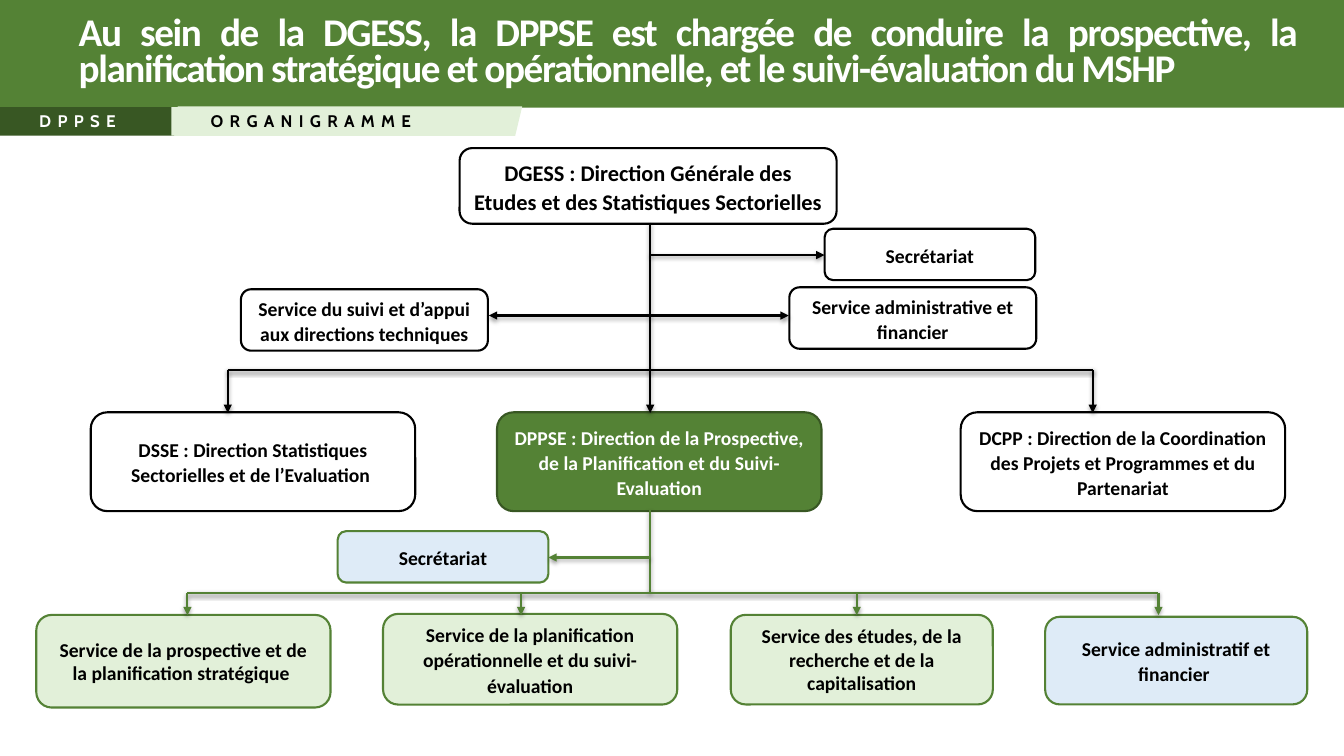
"""Builds the DPPSE organisation chart slide."""
from dataclasses import dataclass

from lxml import etree
from pptx import Presentation
from pptx.dml.color import RGBColor
from pptx.enum.shapes import MSO_CONNECTOR, MSO_SHAPE
from pptx.enum.text import MSO_ANCHOR, MSO_AUTO_SIZE, PP_ALIGN
from pptx.oxml.ns import qn
from pptx.util import Pt

RECTANGLE, ROUNDED = MSO_SHAPE.RECTANGLE, MSO_SHAPE.ROUNDED_RECTANGLE
STRAIGHT = MSO_CONNECTOR.STRAIGHT
MIDDLE, TOP = MSO_ANCHOR.MIDDLE, MSO_ANCHOR.TOP
CENTER, JUSTIFY, LEFT = PP_ALIGN.CENTER, PP_ALIGN.JUSTIFY, PP_ALIGN.LEFT
NO_FIT, FIT_SHAPE = MSO_AUTO_SIZE.NONE, MSO_AUTO_SIZE.SHAPE_TO_FIT_TEXT


@dataclass(frozen=True)
class Theme:
    white: str = "FFFFFF"
    black: str = "000000"
    green: str = "548235"
    dark_green: str = "385723"
    pale_green: str = "E2F0D9"
    pale_blue: str = "DEEBF7"
    body_font: str = "Calibri"
    tab_font: str = "Cabin"
    title_size: float = 28
    head_size: float = 16
    box_size: float = 14
    tab_size: float = 12
    line_width: float = 1.5


THEME = Theme()


@dataclass(frozen=True)
class Box:
    text: str
    left: float
    top: float
    width: float
    height: float
    fill: str = THEME.white
    outline: str = THEME.black
    color: str = THEME.black
    size: float = THEME.box_size
    line_spacing: float = 1.07
    space_after: float = 8


@dataclass(frozen=True)
class Link:
    start: tuple[float, float]
    end: tuple[float, float]
    color: str = THEME.black
    head: bool = False
    tail: bool = False


@dataclass(frozen=True)
class Tab:
    text: str
    left: float
    width: float
    fill: str
    color: str


TITLE = ("Au sein de la DGESS, la DPPSE est chargée de conduire la prospective, la planification "
         "stratégique et opérationnelle, et le suivi-évaluation du MSHP")
BAND_HEIGHT = 77
TAB_TOP, TAB_HEIGHT = 76.5, 20.4
TABS = (Tab("DPPSE", 0, 124.5, THEME.dark_green, THEME.white),
        Tab("ORGANIGRAMME", 122.5, 207.5, THEME.pale_green, THEME.black))
TAB_SLANT = ((372.8, TAB_TOP), (368.5, TAB_TOP + TAB_HEIGHT),
             (122.5, TAB_TOP + TAB_HEIGHT), (126.8, TAB_TOP))

DIRECTION = (231.8, 70.6)
SECRETARIAT = (150.5, 36.7)
SUPPORT = (176.4, 43.9)
BOXES = (
    Box("DGESS : Direction Générale des Etudes et des Statistiques Sectorielles",
        328.3, 105.8, 269.3, 54, size=THEME.head_size),
    Box("Secrétariat", 589, 163.4, *SECRETARIAT),
    Box("Service du suivi et d’appui aux directions techniques", 172.1, 206.6, *SUPPORT),
    Box("Service administrative et financier", 563.8, 205.2, *SUPPORT),
    Box("DSSE : Direction Statistiques Sectorielles et de l’Evaluation ", 64.8, 294.5, *DIRECTION),
    Box("DPPSE : Direction de la Prospective, de la Planification et du Suivi-Evaluation",
        355, 294.5, *DIRECTION, THEME.green, THEME.dark_green, THEME.white),
    Box("DCPP : Direction de la Coordination des Projets et Programmes et du Partenariat",
        686.2, 294.5, *DIRECTION),
    Box("Secrétariat", 241.2, 379.4, *SECRETARIAT, THEME.pale_blue, THEME.green),
    Box("Service de la prospective et de la planification stratégique ",
        25.9, 439.2, 210.2, 66.2, THEME.pale_green, THEME.green, line_spacing=1, space_after=0),
    Box("Service de la planification opérationnelle et du suivi-évaluation",
        273.6, 438.5, 210.2, 64.8, THEME.pale_green, THEME.green),
    Box("Service des études, de la recherche et de la capitalisation",
        522, 439.2, 187.2, 64, THEME.pale_green, THEME.green, line_spacing=1, space_after=0),
    Box("Service administratif et financier ",
        746.6, 440.6, 187.2, 62.6, THEME.pale_blue, THEME.green),
)

TRUNK = 464.4
UPPER_BUS, LOWER_BUS = 264.2, 423.5
UPPER_DROPS = (162.7, TRUNK, 780.5)
LOWER_DROPS = (133.9, 372.2, 612, 827.5)
LINKS = (
    Link((TRUNK, 159.1), (TRUNK, UPPER_BUS)),
    Link((UPPER_DROPS[0], UPPER_BUS), (UPPER_DROPS[-1], UPPER_BUS)),
    *(Link((x, UPPER_BUS), (x, 295), tail=True) for x in UPPER_DROPS),
    Link((TRUNK, 182.2), (589, 182.2), tail=True),
    Link((349.2, 225.4), (563.4, 225.4), head=True, tail=True),
    Link((TRUNK, 364), (TRUNK, LOWER_BUS), THEME.green),
    Link((LOWER_DROPS[0], LOWER_BUS), (LOWER_DROPS[-1], LOWER_BUS), THEME.green),
    *(Link((x, LOWER_BUS), (x, 439.4), THEME.green, tail=True) for x in LOWER_DROPS),
    Link((391.7, 398.2), (TRUNK, 398.2), THEME.green, head=True),
)


def paint(shape, fill: str, outline: str | None = None) -> None:
    """Fill and outline a shape without a shadow."""
    shape.shadow.inherit = False
    shape.fill.solid()
    shape.fill.fore_color.rgb = RGBColor.from_string(fill)
    if outline is None:
        shape.line.fill.background()
    else:
        shape.line.color.rgb = RGBColor.from_string(outline)
        shape.line.width = Pt(THEME.line_width)


def write(shape, text: str, font_name: str, size: float, color: str,
          alignment, anchor, tracking: float = 0):
    """Write one bold paragraph and return it."""
    frame = shape.text_frame
    frame.text = text
    frame.word_wrap = True
    frame.vertical_anchor = anchor
    paragraph = frame.paragraphs[0]
    paragraph.alignment = alignment
    for run in paragraph.runs:
        run.font.name = font_name
        run.font.size = Pt(size)
        run.font.bold = True
        run.font.color.rgb = RGBColor.from_string(color)
        if tracking:
            run._r.get_or_add_rPr().set("spc", str(round(tracking * 100)))
    return paragraph


def add_box(slide, box: Box) -> None:
    """Draw one unit of the chart."""
    shape = slide.shapes.add_shape(ROUNDED, Pt(box.left), Pt(box.top), Pt(box.width), Pt(box.height))
    paint(shape, box.fill, box.outline)
    paragraph = write(shape, box.text, THEME.body_font, box.size, box.color, CENTER, MIDDLE)
    paragraph.line_spacing = box.line_spacing
    paragraph.space_after = Pt(box.space_after)


def add_link(slide, link: Link) -> None:
    """Draw one line with its arrowheads and soft shadow."""
    connector = slide.shapes.add_connector(STRAIGHT, *(Pt(v) for v in link.start + link.end))
    connector.line.color.rgb = RGBColor.from_string(link.color)
    connector.line.width = Pt(THEME.line_width)
    line = connector.line._get_or_add_ln()
    for tag, present in (("a:headEnd", link.head), ("a:tailEnd", link.tail)):
        if present:
            etree.SubElement(line, qn(tag), type="triangle")
    effects = etree.SubElement(connector._element.spPr, qn("a:effectLst"))
    shadow = etree.SubElement(effects, qn("a:outerShdw"), blurRad=str(Pt(3.1)),
                              dist=str(Pt(1.6)), dir="5400000", rotWithShape="0")
    shade = etree.SubElement(shadow, qn("a:srgbClr"), val=THEME.black)
    etree.SubElement(shade, qn("a:alpha"), val="38000")


def add_tab(slide, tab: Tab) -> None:
    """Draw one label under the title band."""
    shape = slide.shapes.add_shape(RECTANGLE, Pt(tab.left), Pt(TAB_TOP), Pt(tab.width), Pt(TAB_HEIGHT))
    paint(shape, tab.fill)
    write(shape, tab.text, THEME.tab_font, THEME.tab_size, tab.color, LEFT, TOP, 4.5)
    frame = shape.text_frame
    frame.word_wrap = False
    frame.auto_size = FIT_SHAPE
    frame.margin_left = frame.margin_right = Pt(28)
    frame.margin_top = frame.margin_bottom = Pt(2.9)


def add_title(slide, slide_width: int) -> None:
    """Draw the band and set the title on it."""
    band = slide.shapes.add_shape(RECTANGLE, 0, 0, slide_width, Pt(BAND_HEIGHT))
    paint(band, THEME.green)
    title = slide.shapes.title
    band._element.addnext(title._element)
    title.left, title.top, title.width, title.height = Pt(49), Pt(0), Pt(884.2), Pt(BAND_HEIGHT)
    paragraph = write(title, TITLE, THEME.body_font, THEME.title_size, THEME.white, JUSTIFY, MIDDLE, -1)
    paragraph.line_spacing = Pt(26)
    title.text_frame.auto_size = NO_FIT


def main() -> None:
    """Build and save the slide."""
    presentation = Presentation()
    presentation.slide_width, presentation.slide_height = Pt(960), Pt(540)
    slide = presentation.slides.add_slide(presentation.slide_layouts[5])
    add_title(slide, presentation.slide_width)
    for box in BOXES:
        add_box(slide, box)
    for link in LINKS:
        add_link(slide, link)
    builder = slide.shapes.build_freeform(*TAB_SLANT[0], scale=Pt(1))
    builder.add_line_segments(TAB_SLANT[1:], close=True)
    paint(builder.convert_to_shape(), THEME.pale_green)
    for tab in TABS:
        add_tab(slide, tab)
    presentation.save("out.pptx")


if __name__ == "__main__":
    main()
